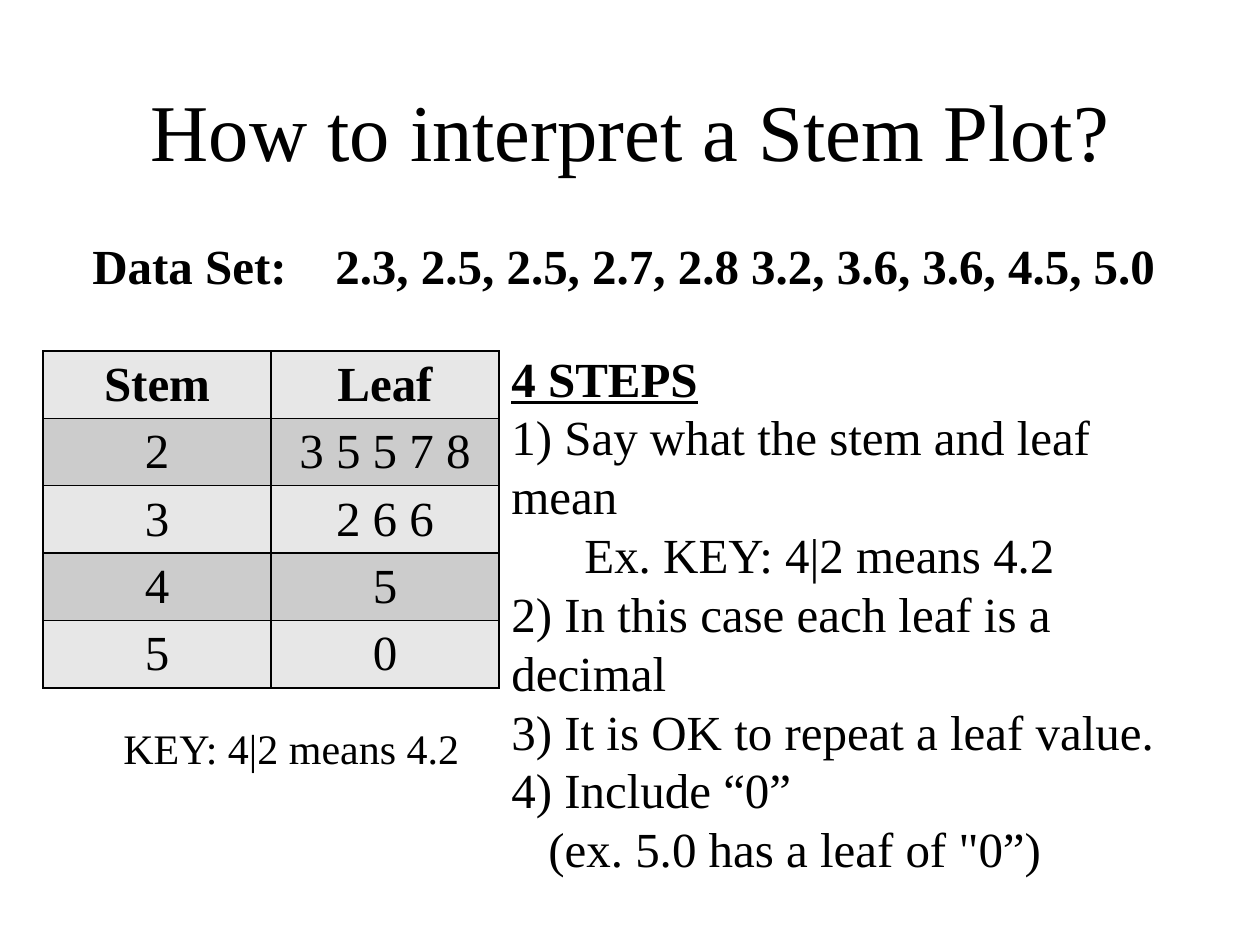
from dataclasses import dataclass
from lxml.etree import SubElement
from pptx import Presentation
from pptx.dml.color import RGBColor as Rgb
from pptx.enum.text import MSO_ANCHOR as Anchor, PP_ALIGN as Align
from pptx.oxml.ns import qn
from pptx.util import Pt

PX = 914400 // 126


@dataclass(frozen=True)
class Theme:
    """Colours, font and type sizes of the slide."""
    face: str = "Times New Roman"
    ink: str = "000000"
    bands: tuple = ("E7E7E7", "CCCCCC")
    title: int = 46
    body: int = 28
    key: int = 24


THEME = Theme()
ROWS = [("Stem", "Leaf"), ("2", "3 5 5 7 8"), ("3", "2 6 6"),
        ("4", "5"), ("5", "0")]
STEPS = [
    ("1) Say what the stem and leaf mean", 0),
    ("Ex. KEY: 4|2 means 4.2", 73),
    ("2) In this case each leaf is a decimal", 0),
    ("3) It is OK to repeat a leaf value.", 0),
    ("4) Include “0”", 0),
    ("(ex. 5.0 has a leaf of \"0”)", 37),
]


def place(shape, x, y, w, h):
    """Set a shape's position and size in px."""
    shape.left, shape.top, shape.width, shape.height = (
        n * PX for n in (x, y, w, h))


def style(para, size, bold=False, line=False, align=Align.LEFT):
    """Format a whole paragraph."""
    para.alignment = align
    font = para.font
    font.name, font.size = THEME.face, Pt(size)
    font.bold, font.underline = bold, line
    font.color.rgb = Rgb.from_string(THEME.ink)


def set_tab(para, pos):
    """Add a left tab stop at pos px."""
    tabs = SubElement(para._p.get_or_add_pPr(), qn("a:tabLst"))
    SubElement(tabs, qn("a:tab"), pos=str(pos * PX), algn="l")


def add_box(slide, *box):
    """Add a wrapping text box and return its frame."""
    shape = slide.shapes.add_textbox(*(n * PX for n in box))
    shape.text_frame.word_wrap = True
    return shape.text_frame


def add_title(slide, text):
    """Fill and format the title placeholder."""
    title = slide.shapes.title
    place(title, 126, 69, 1008, 120)
    frame = title.text_frame
    frame.text = text
    frame.vertical_anchor = Anchor.MIDDLE
    style(frame.paragraphs[0], THEME.title, align=Align.CENTER)


def add_edges(cell):
    """Draw a thin line on all sides of a cell."""
    props = cell._tc.get_or_add_tcPr()
    for spot, side in enumerate(("lnL", "lnR", "lnT", "lnB")):
        edge = SubElement(props, qn(f"a:{side}"), w=str(Pt(1)))
        fill = SubElement(edge, qn("a:solidFill"))
        SubElement(fill, qn("a:srgbClr"), val=THEME.ink)
        props.insert(spot, edge)


def add_plot(slide):
    """Add the stem and leaf table."""
    box = (43, 351, 456, 337)
    table = slide.shapes.add_table(
        len(ROWS), 2, *(n * PX for n in box)).table
    for r, row in enumerate(ROWS):
        for c, text in enumerate(row):
            cell = table.cell(r, c)
            cell.text = text
            cell.vertical_anchor = Anchor.MIDDLE
            cell.fill.solid()
            cell.fill.fore_color.rgb = Rgb.from_string(THEME.bands[r % 2])
            style(cell.text_frame.paragraphs[0], THEME.body,
                  bold=r == 0, align=Align.CENTER)
            add_edges(cell)


def add_data(slide):
    """Add the data set line."""
    para = add_box(slide, 80, 229, 1100, 72).paragraphs[0]
    para.text = "Data Set:\t2.3, 2.5, 2.5, 2.7, 2.8 3.2, 3.6, 3.6, 4.5, 5.0"
    set_tab(para, 243)
    style(para, THEME.body, bold=True)


def add_steps(slide):
    """Add the heading and the indented steps."""
    frame = add_box(slide, 499, 342, 714, 540)
    head = frame.paragraphs[0]
    head.text = "4 STEPS"
    style(head, THEME.body, bold=True, line=True)
    for text, inset in STEPS:
        para = frame.add_paragraph()
        para.text = text
        para._p.get_or_add_pPr().set("marL", str(inset * PX))
        style(para, THEME.body)


def add_key(slide):
    """Add the key under the table."""
    para = add_box(slide, 111, 716, 365, 63).paragraphs[0]
    para.text = "KEY: 4|2 means 4.2"
    style(para, THEME.key)


def main():
    """Build and save the slide."""
    deck = Presentation()
    deck.slide_width, deck.slide_height = 1260 * PX, 945 * PX
    slide = deck.slides.add_slide(deck.slide_layouts[5])
    add_title(slide, "How to interpret a Stem Plot?")
    add_plot(slide)
    add_data(slide)
    add_steps(slide)
    add_key(slide)
    deck.save("out.pptx")


if __name__ == "__main__":
    main()
